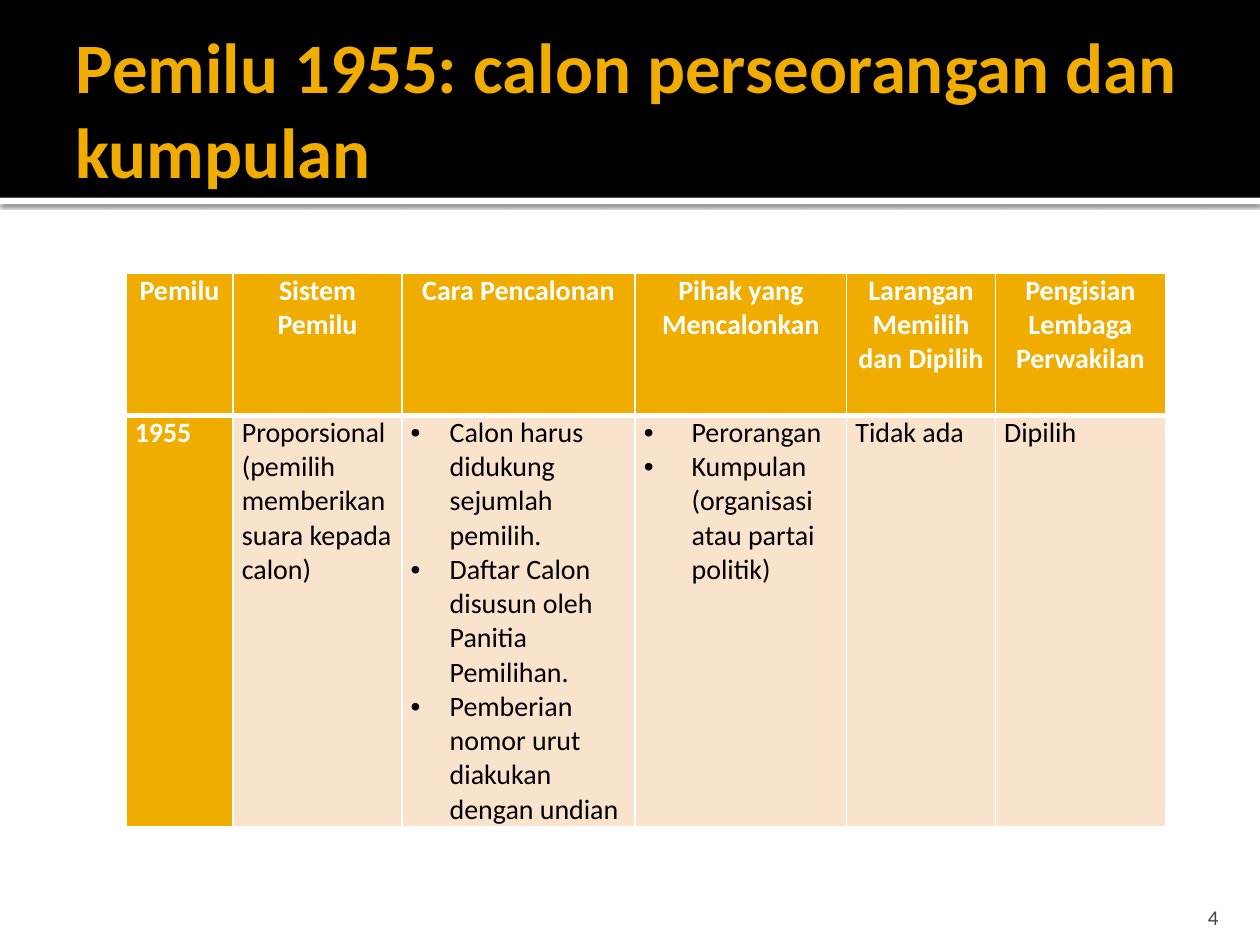
from lxml.etree import SubElement
from pptx import Presentation
from pptx.dml.color import RGBColor
from pptx.enum.shapes import MSO_SHAPE as Shape
from pptx.enum.text import MSO_ANCHOR as Anchor, MSO_AUTO_SIZE as AutoSize, PP_ALIGN as Align
from pptx.oxml.ns import qn
from pptx.util import Inches, Pt

COLORS = {"gold": "F0AD00", "cream": "F9E3CC", "black": "000000",
          "white": "FFFFFF", "gray": "454545"}
COLUMN_WIDTHS = [0.85, 1.34, 1.85, 1.68, 1.18, 1.35]
ROW_HEIGHTS = [1.13, 3.2]
BULLET_INDENTS = {2: 0.31, 3: 0.38}
ROWS = [
    ["Pemilu", "Sistem\nPemilu", "Cara Pencalonan", "Pihak yang Mencalonkan",
     "Larangan Memilih dan Dipilih", "Pengisian Lembaga Perwakilan"],
    ["1955", "Proporsional (pemilih memberikan suara kepada calon)",
     "Calon harus didukung sejumlah pemilih.\n"
     "Daftar Calon disusun oleh Panitia Pemilihan.\n"
     "Pemberian nomor urut diakukan dengan undian",
     "Perorangan\nKumpulan (organisasi atau partai politik)", "Tidak ada", "Dipilih"],
]


class ElectionSlide:
    """Holds the slide and its style, with one method per kind of element."""

    font = "Calibri"

    def __init__(self, slide):
        self.slide = slide

    def color(self, name):
        return RGBColor.from_string(COLORS[name])

    def format_text(self, frame, size, color, bold=False, align=Align.LEFT):
        for paragraph in frame.paragraphs:
            paragraph.alignment = align
            for run in paragraph.runs:
                run.font.name = self.font
                run.font.size = Pt(size)
                run.font.bold = bold
                run.font.color.rgb = self.color(color)

    def set_margins(self, frame, left, top, right, bottom):
        frame.margin_left, frame.margin_top = Inches(left), Inches(top)
        frame.margin_right, frame.margin_bottom = Inches(right), Inches(bottom)

    def title(self, text):
        title = self.slide.shapes.title
        title.left, title.top = Inches(0.5), Inches(0.17)
        title.width, title.height = Inches(9), Inches(1.37)
        frame = title.text_frame
        frame.text = text
        frame.auto_size = AutoSize.NONE
        frame.vertical_anchor = Anchor.MIDDLE
        self.set_margins(frame, 0.1, 0.05, 0.05, 0.05)
        self.format_text(frame, 40.5, "gold", bold=True)

    def band(self, top, height, color, shadow=False):
        band = self.slide.shapes.add_shape(
            Shape.RECTANGLE, 0, Inches(top), Inches(10), Inches(height))
        band.fill.solid()
        band.fill.fore_color.rgb = self.color(color)
        band.line.fill.background()
        band.shadow.inherit = False
        if shadow:
            effects = band._element.spPr.find(qn("a:effectLst"))
            outer = SubElement(effects, qn("a:outerShdw"), blurRad=str(Pt(2.5)),
                               dist=str(Pt(0.8)), dir="5400000", algn="tl", rotWithShape="0")
            shade = SubElement(outer, qn("a:srgbClr"), val=COLORS["black"])
            SubElement(shade, qn("a:alpha"), val="60000")
        self.slide.shapes.title._element.addprevious(band._element)

    def borders(self, cell, top, bottom):
        properties = cell._tc.get_or_add_tcPr()
        for side, width in (("L", 1), ("R", 1), ("T", top), ("B", bottom)):
            line = SubElement(properties, qn(f"a:ln{side}"), w=str(Pt(width)))
            fill = SubElement(line, qn("a:solidFill"))
            SubElement(fill, qn("a:srgbClr"), val=COLORS["white"])

    def bullets(self, frame, indent):
        for paragraph in frame.paragraphs:
            properties = paragraph._p.get_or_add_pPr()
            properties.set("marL", str(Inches(indent)))
            properties.set("indent", str(-Inches(indent)))
            SubElement(properties, qn("a:buFont"), typeface="Arial")
            SubElement(properties, qn("a:buChar"), char="•")

    def cell(self, cell, text, row, column):
        header = row == 0
        accent = header or column == 0
        self.borders(cell, top=1 if header else 3, bottom=3 if header else 1)
        cell.fill.solid()
        cell.fill.fore_color.rgb = self.color("gold" if accent else "cream")
        self.set_margins(cell, 0.07, 0, 0.07, 0)
        cell.text_frame.text = text
        self.format_text(cell.text_frame, 16, "white" if accent else "black",
                         bold=accent, align=Align.CENTER if header else Align.LEFT)
        if not header and column in BULLET_INDENTS:
            self.bullets(cell.text_frame, BULLET_INDENTS[column])

    def table(self, left, top, rows):
        table = self.slide.shapes.add_table(
            len(rows), len(COLUMN_WIDTHS), Inches(left), Inches(top),
            Inches(sum(COLUMN_WIDTHS)), Inches(sum(ROW_HEIGHTS))).table
        for column, width in zip(table.columns, COLUMN_WIDTHS):
            column.width = Inches(width)
        for row, height in zip(table.rows, ROW_HEIGHTS):
            row.height = Inches(height)
        for r, texts in enumerate(rows):
            for c, text in enumerate(texts):
                self.cell(table.cell(r, c), text, r, c)

    def page_number(self, text):
        frame = self.slide.shapes.add_textbox(
            Inches(8.97), Inches(7.08), Inches(0.8), Inches(0.3)).text_frame
        frame.text = text
        frame.word_wrap = True
        frame.vertical_anchor = Anchor.BOTTOM
        self.set_margins(frame, 0.1, 0.05, 0.1, 0)
        self.format_text(frame, 12, "gray", align=Align.RIGHT)


def main():
    deck = Presentation()
    deck.slide_width, deck.slide_height = Inches(10), Inches(7.5)
    page = ElectionSlide(deck.slides.add_slide(deck.slide_layouts[5]))
    page.band(1.57, 0.05, "white", shadow=True)
    page.band(0, 1.57, "black")
    page.title("Pemilu 1955: calon perseorangan dan kumpulan")
    page.table(1, 2.17, ROWS)
    page.page_number("4")
    deck.save("out.pptx")


if __name__ == "__main__":
    main()
